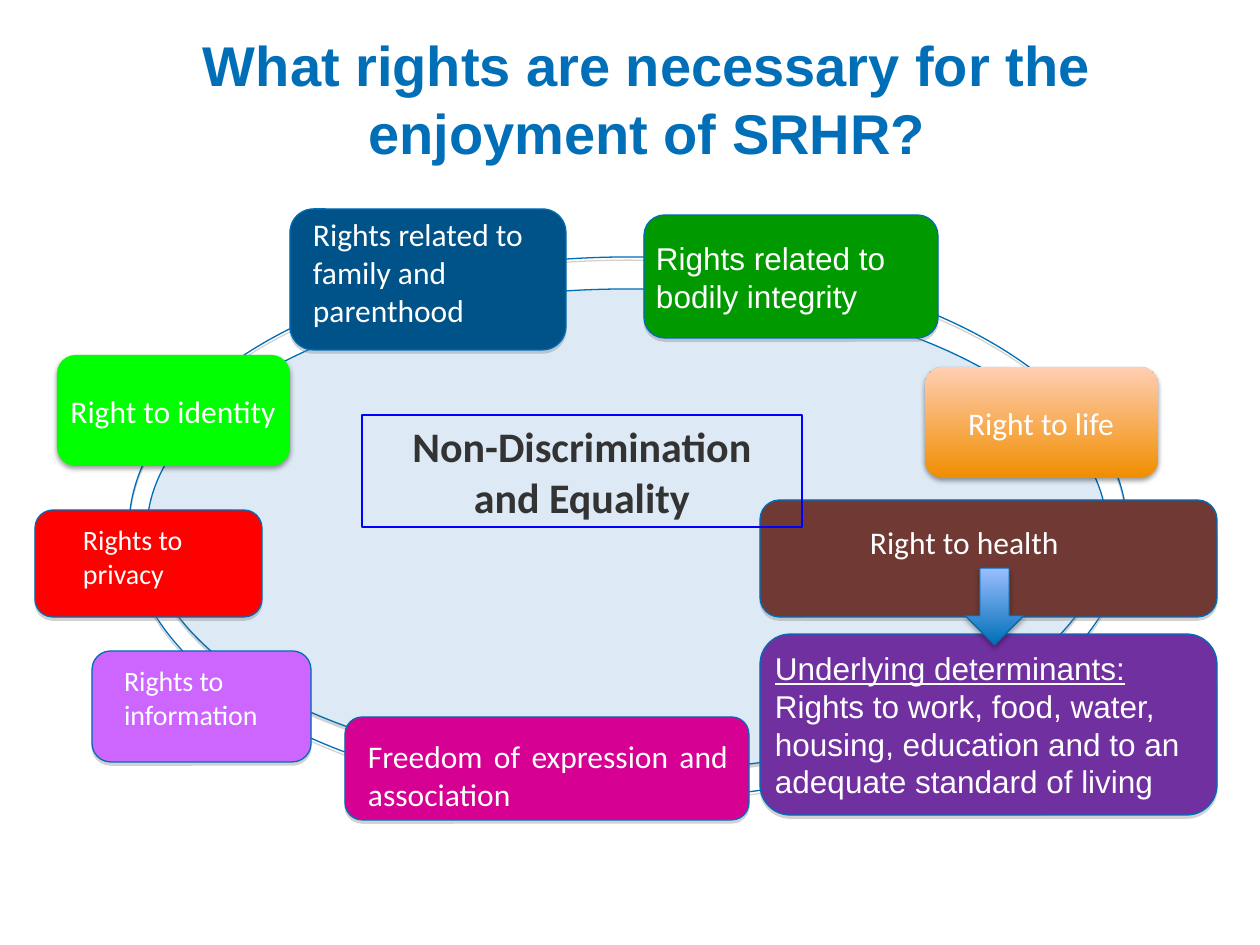
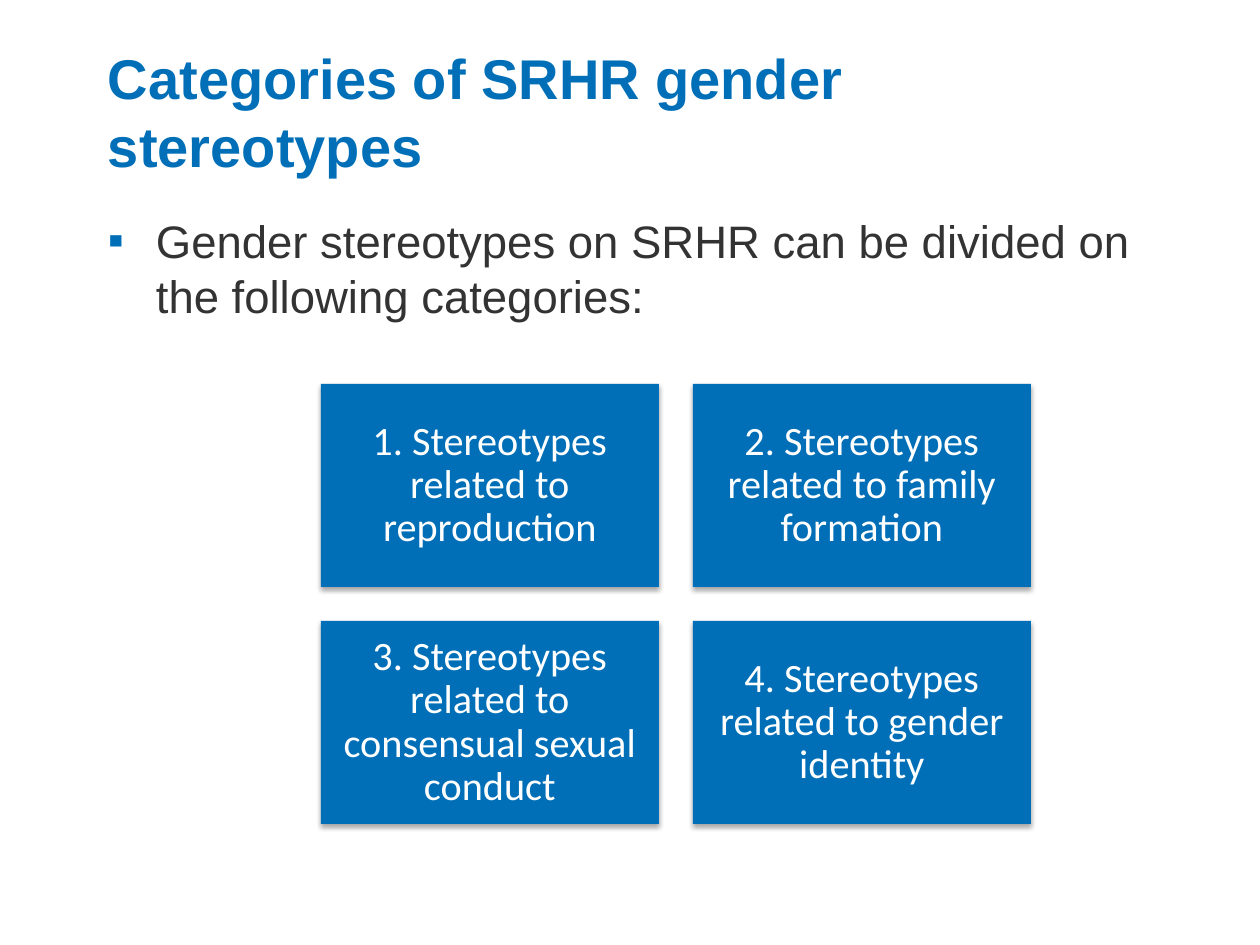
from lxml import etree
from pptx import Presentation
from pptx.dml.color import RGBColor
from pptx.enum.shapes import MSO_SHAPE as Shape
from pptx.enum.text import MSO_ANCHOR as Anchor, PP_ALIGN as Align
from pptx.oxml.ns import qn
from pptx.util import Emu, Pt

PX_PER_INCH = 126
COLORS = {
    "blue": "006FB7", "outline": "006DB7", "navy": "005389", "sky": "9ABEFF",
    "arrow_edge": "006CB3", "pale": "DDE9F4", "ink": "333333", "white": "FFFFFF",
    "purple": "7030A0", "green": "009900", "red": "FF0000", "pink": "D60093",
    "brown": "703933", "orange": "F18E00", "peach": "FFCEB3", "lilac": "CC66FF",
    "lime": "00FF00", "frame": "0000FF", "gray": "808080", "black": "000000",
}
CRISP_SHADOW = ("gray", 35, 0, 1.8)
SOFT_SHADOW = ("black", 38, 3, 1.6)
DEEP_SHADOW = ("black", 35, 3, 1.8)

RIGHTS = [
    dict(box=(760, 634, 457, 181), fill="purple", inner=(9, 11, 440, 159),
         text=["Rights to work, food, water, housing, education and to an "
               "adequate standard of living"],
         lead="Underlying determinants: ", font="Arial", anchor=Anchor.MIDDLE),
    dict(box=(644, 215, 294, 123), fill="green", inner=(6, 19, 282, 86),
         text=["Rights related to bodily integrity"], font="Arial", anchor=Anchor.MIDDLE),
    dict(box=(35, 510, 227, 107), fill="red", inner=(42, 7, 159, 79),
         text=["Rights to privacy"], size=16),
    dict(box=(290, 209, 276, 141), fill="navy", inner=(17, 0, 239, 122),
         text=["Rights related to family and parenthood"]),
    dict(box=(345, 717, 404, 103), fill="pink", inner=(17, 14, 372, 86),
         text=["Freedom of expression and association"], align=Align.JUSTIFY),
    dict(box=(760, 500, 457, 117), fill="brown", inner=(104, 17, 239, 49),
         text=["Right to health"]),
    dict(box=(925, 367, 233, 111), fill=("orange", "peach"), inner=(5, 31, 222, 49),
         text=["Right to life"], align=Align.CENTER, anchor=Anchor.MIDDLE,
         line=None, shadow=SOFT_SHADOW),
    dict(box=(92, 651, 219, 111), fill="lilac", inner=(26, 7, 193, 79),
         text=["Rights to information"], size=16),
    dict(box=(57, 355, 233, 111), fill="lime", inner=(5, 13, 222, 86),
         text=["Right to identity"], align=Align.CENTER, anchor=Anchor.MIDDLE,
         line=None, shadow=SOFT_SHADOW),
]
STEREOTYPES = [
    "1. Stereotypes related to reproduction",
    "2. Stereotypes related to family formation",
    "3. Stereotypes related to consensual sexual conduct",
    "4. Stereotypes related to gender identity",
]


def px(length):
    return Emu(round(length * 914400 / PX_PER_INCH))


def color(name):
    return RGBColor.from_string(COLORS[name])


def add_shadow(shape, tint, alpha, blur, distance):
    effects = shape._element.spPr.find(qn("a:effectLst"))
    outer = etree.SubElement(effects, qn("a:outerShdw"), blurRad=str(Pt(blur)),
                             dist=str(Pt(distance)), dir="5400000",
                             algn="ctr", rotWithShape="0")
    tone = etree.SubElement(outer, qn("a:srgbClr"), val=COLORS[tint])
    etree.SubElement(tone, qn("a:alpha"), val=str(alpha * 1000))


def draw(page, kind, box, fill=None, line=None, shadow=None):
    shape = page.shapes.add_shape(kind, *map(px, box))
    shape.shadow.inherit = False
    if isinstance(fill, tuple):
        shape.fill.gradient()
        shape.fill.gradient_angle = 90
        for stop, name in zip(shape.fill.gradient_stops, fill):
            stop.color.rgb = color(name)
    elif fill:
        shape.fill.solid()
        shape.fill.fore_color.rgb = color(fill)
    else:
        shape.fill.background()
    if line:
        shape.line.color.rgb = color(line)
        shape.line.width = Pt(0.75)
    else:
        shape.line.fill.background()
    if shadow:
        add_shadow(shape, *shadow)
    return shape


def write(shape, lines, size=18, font="Calibri", tint="white", bold=False, lead=None,
          align=Align.LEFT, anchor=Anchor.TOP, inset=6, spacing=None, bullet=None):
    frame = shape.text_frame
    frame.word_wrap = True
    frame.vertical_anchor = anchor
    frame.margin_left = frame.margin_right = px(inset)
    frame.margin_top = frame.margin_bottom = px(inset)
    for index, line in enumerate(lines):
        para = frame.add_paragraph() if index else frame.paragraphs[0]
        para.alignment = align
        if spacing:
            para.line_spacing = spacing
        if bullet:
            add_bullet(para, bullet)
        for piece in filter(None, (lead, line)):
            span = para.add_run()
            span.text = piece
            span.font.size = Pt(size)
            span.font.name = font
            span.font.bold = bold
            span.font.underline = piece == lead
            span.font.color.rgb = color(tint)


def add_text(page, box, lines, **style):
    write(page.shapes.add_textbox(*map(px, box)), lines, **style)


def add_bullet(para, mark):
    props = para._p.get_or_add_pPr()
    props.set("marL", str(px(48)))
    props.set("indent", str(-px(48)))
    tint = etree.SubElement(props, qn("a:buClr"))
    etree.SubElement(tint, qn("a:srgbClr"), val=COLORS["blue"])
    etree.SubElement(props, qn("a:buFont"), typeface="Arial")
    etree.SubElement(props, qn("a:buChar"), char=mark)


def add_title(page, box, text, align=Align.LEFT):
    add_text(page, box, [text], size=32, font="Arial", tint="blue", bold=True, align=align)


def add_right(page, box, fill, inner, text, line="outline", shadow=CRISP_SHADOW, **style):
    draw(page, Shape.ROUNDED_RECTANGLE, box, fill, line, shadow)
    left, top, width, height = inner
    add_text(page, (box[0] + left, box[1] + top, width, height), text, **style)


def add_ring(page, box):
    left, top, width, height = box
    inner = (left + 18, top + 32, width - 38, height - 60)
    draw(page, Shape.OVAL, inner, "pale", "outline", CRISP_SHADOW)
    draw(page, Shape.OVAL, box, None, "outline", CRISP_SHADOW)


def add_tiles(page, box, gap, columns=2):
    left, top, width, height = box
    rows = len(STEREOTYPES) // columns
    tile_width = (width - gap * (columns - 1)) // columns
    tile_height = (height - gap * (rows - 1)) // rows
    for index, label in enumerate(STEREOTYPES):
        row, column = divmod(index, columns)
        place = (left + column * (tile_width + gap), top + row * (tile_height + gap),
                 tile_width, tile_height)
        tile = draw(page, Shape.RECTANGLE, place, "blue", shadow=DEEP_SHADOW)
        write(tile, [label], size=23, align=Align.CENTER, anchor=Anchor.MIDDLE,
              inset=13, spacing=0.9)


def build_rights(page):
    add_ring(page, (129, 257, 998, 543))
    add_title(page, (77, 25, 1140, 150),
              "What rights are necessary for the enjoyment of SRHR?", Align.CENTER)
    for right in RIGHTS:
        add_right(page, **right)
    center = draw(page, Shape.RECTANGLE, (362, 415, 440, 112), line="frame")
    write(center, ["Non-Discrimination", "and Equality"], size=24, tint="ink",
          bold=True, align=Align.CENTER)
    draw(page, Shape.DOWN_ARROW, (965, 568, 59, 77), ("blue", "sky"),
         "arrow_edge", DEEP_SHADOW)


def build_stereotypes(page):
    add_title(page, (102, 38, 1042, 150), "Categories of SRHR gender stereotypes")
    add_text(page, (102, 207, 1043, 617),
             ["Gender stereotypes on SRHR can be divided on the following categories:"],
             size=26, font="Arial", tint="ink", bullet="▪")
    add_tiles(page, (321, 384, 710, 440), gap=34)


def main():
    deck = Presentation()
    deck.slide_width, deck.slide_height = px(1260), px(945)
    for build in (build_rights, build_stereotypes):
        build(deck.slides.add_slide(deck.slide_layouts[6]))
    deck.save("out.pptx")


if __name__ == "__main__":
    main()
